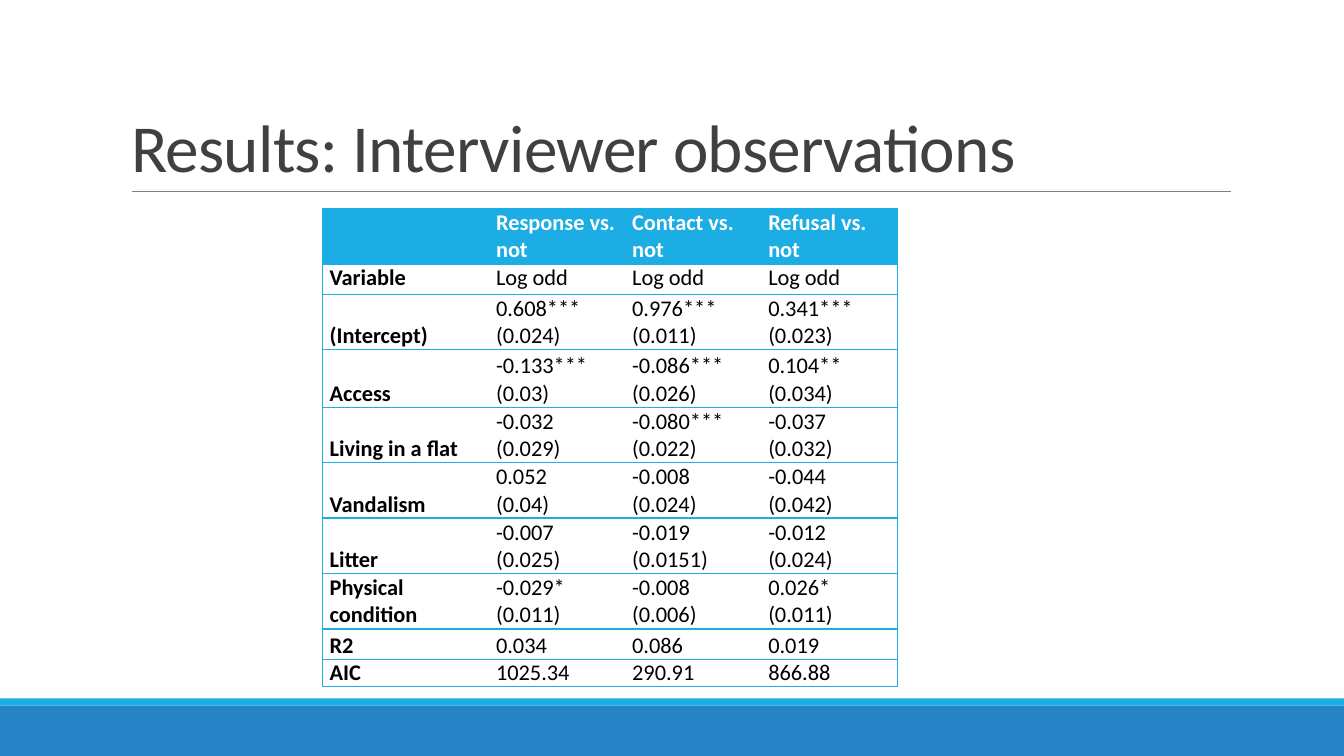
"""Build the slide of results for interviewer observations."""
from lxml import etree
from pptx import Presentation
from pptx.dml.color import RGBColor
from pptx.enum.shapes import MSO_CONNECTOR, MSO_SHAPE
from pptx.enum.text import MSO_ANCHOR, MSO_AUTO_SIZE, PP_ALIGN
from pptx.oxml.ns import qn
from pptx.util import Inches, Pt

RECT = MSO_SHAPE.RECTANGLE
LINE = MSO_CONNECTOR.STRAIGHT
TOP, LOW = MSO_ANCHOR.TOP, MSO_ANCHOR.BOTTOM
LEFT = PP_ALIGN.LEFT
FIXED = MSO_AUTO_SIZE.NONE
WIDE, HIGH = 13.33, 7.5
FONT = "Calibri"
HUES = {"blue": "2683C6", "sky": "1CADE4", "rule": "808080",
        "title": "404040", "text": "000000", "white": "FFFFFF"}
COLS = [1.65, 1.35, 1.35, 1.35]
TALL = [0.55, 0.3, 0.55, 0.57, 0.55, 0.55, 0.55, 0.55, 0.3, 0.27]
ROWS = [
    ["", "Response vs. not", "Contact vs. not", "Refusal vs. not"],
    ["Variable", "Log odd", "Log odd", "Log odd"],
    ["(Intercept)", "0.608***\n(0.024)", "0.976***\n(0.011)", "0.341***\n(0.023)"],
    ["Access", "-0.133***\n(0.03)", "-0.086***\n(0.026)", "0.104**\n(0.034)"],
    ["Living in a flat", "-0.032\n(0.029)", "-0.080***\n(0.022)", "-0.037\n(0.032)"],
    ["Vandalism", "0.052\n(0.04)", "-0.008\n(0.024)", "-0.044\n(0.042)"],
    ["Litter", "-0.007\n(0.025)", "-0.019\n(0.0151)", "-0.012\n(0.024)"],
    ["Physical condition", "-0.029*\n(0.011)", "-0.008\n(0.006)", "0.026*\n(0.011)"],
    ["R2", "0.034", "0.086", "0.019"],
    ["AIC", "1025.34", "290.91", "866.88"],
]


def tint(name):
    """Return the named colour."""
    return RGBColor.from_string(HUES[name])


def style(frame, size, hue, bold=False):
    """Format all runs of a text frame."""
    for para in frame.paragraphs:
        para.alignment = LEFT
        for run in para.runs:
            font = run.font
            font.name, font.size, font.bold = FONT, Pt(size), bold
            font.color.rgb = tint(hue)


def add_band(slide, top, tall, hue):
    """Add a plain band across the slide."""
    band = slide.shapes.add_shape(RECT, 0, Inches(top), Inches(WIDE), Inches(tall))
    band.shadow.inherit = False
    band.fill.solid()
    band.fill.fore_color.rgb = tint(hue)
    band.line.fill.background()


def add_rule(slide, left, right, top):
    """Add the thin rule below the title."""
    rule = slide.shapes.add_connector(
        LINE, Inches(left), Inches(top), Inches(right), Inches(top))
    rule.line.color.rgb = tint("rule")
    rule.line.width = Pt(0.5)
    etree.SubElement(rule._element.spPr, qn("a:effectLst"))


def set_title(slide, text):
    """Place and format the title."""
    title = slide.shapes.title
    title.left, title.top = Inches(1.2), Inches(0.31)
    title.width, title.height = Inches(11), Inches(1.59)
    frame = title.text_frame
    frame.text = text
    frame.word_wrap = True
    frame.auto_size = FIXED
    frame.vertical_anchor = LOW
    style(frame, 48, "title")
    para = frame.paragraphs[0]
    para.line_spacing = 0.85
    para.runs[0].font._element.set("spc", "-50")


def add_edge(cell, side, shown):
    """Draw or hide one border of a cell."""
    edge = etree.SubElement(
        cell._tc.get_or_add_tcPr(), qn(f"a:ln{side}"), w=str(Pt(1)))
    if shown:
        fill = etree.SubElement(edge, qn("a:solidFill"))
        etree.SubElement(fill, qn("a:srgbClr"), val=HUES["sky"])
    else:
        etree.SubElement(edge, qn("a:noFill"))


def fill_cell(cell, text, row, col):
    """Write and format one cell by its place in the grid."""
    head = row == 0
    cell.text_frame.text = text
    cell.margin_left = cell.margin_right = Inches(0.07)
    cell.margin_top = cell.margin_bottom = 0
    cell.vertical_anchor = TOP if row < 2 else LOW
    shown = {"L": col == 0, "R": col == len(COLS) - 1, "T": True, "B": True}
    for side, seen in shown.items():
        add_edge(cell, side, seen)
    if head:
        cell.fill.solid()
        cell.fill.fore_color.rgb = tint("sky")
    else:
        cell.fill.background()
    style(cell.text_frame, 16, "white" if head else "text", head or col == 0)


def add_grid(slide, left, top):
    """Add the table of log odds."""
    table = slide.shapes.add_table(
        len(ROWS), len(COLS), Inches(left), Inches(top),
        Inches(sum(COLS)), Inches(sum(TALL))).table
    table.horz_banding = False
    for col, wide in enumerate(COLS):
        table.columns[col].width = Inches(wide)
    for row, texts in enumerate(ROWS):
        table.rows[row].height = Inches(TALL[row])
        for col, text in enumerate(texts):
            fill_cell(table.cell(row, col), text, row, col)


def main():
    """Build and save the slide."""
    deck = Presentation()
    deck.slide_width, deck.slide_height = Inches(WIDE), Inches(HIGH)
    slide = deck.slides.add_slide(deck.slide_layouts[5])
    add_band(slide, 7, 0.5, "blue")
    add_band(slide, 6.93, 0.07, "sky")
    add_rule(slide, 1.31, 12.21, 1.9)
    set_title(slide, "Results: Interviewer observations")
    add_grid(slide, 3.2, 2.07)
    deck.save("out.pptx")


if __name__ == "__main__":
    main()
